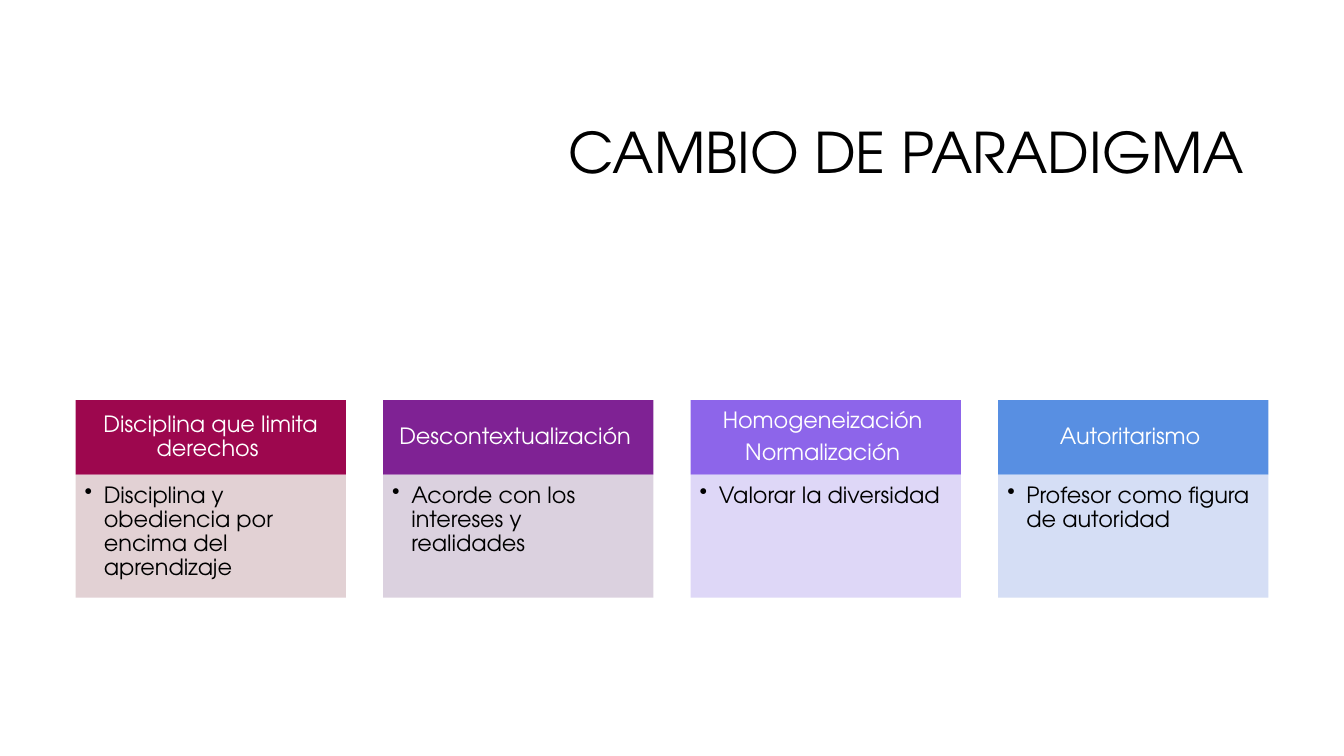
import pptx
import pptx.dml.color
import pptx.enum.shapes
import pptx.enum.text
import pptx.oxml
import pptx.oxml.ns
import pptx.util

Inches = pptx.util.Inches
Pt = pptx.util.Pt
ALIGN = pptx.enum.text.PP_ALIGN
ANCHOR = pptx.enum.text.MSO_ANCHOR
NS = pptx.oxml.ns.nsdecls("a")

COLORS = {
    "black": "000000", "white": "FFFFFF",
    "wine": "9D074E", "rose": "DFCCD0",
    "purple": "7F2294", "mauve": "D8CDDC",
    "violet": "8D65EA", "lilac": "DBD3F7",
    "blue": "588FE2", "sky": "D1DBF4",
}

CARDS = [
    (["Disciplina que limita derechos "],
     "Disciplina y obediencia por encima del aprendizaje", "wine", "rose"),
    (["Descontextualización "],
     "Acorde con los intereses y realidades", "purple", "mauve"),
    (["Homogeneización ", "Normalización "],
     "Valorar la diversidad", "violet", "lilac"),
    (["Autoritarismo "],
     "Profesor como figura de autoridad", "blue", "sky"),
]
LEFT, TOP, WIDTH, STEP = 0.75, 3.97, 2.68, 3.05
HEAD, BODY = 0.74, 1.22


def rgb(name):
    return pptx.dml.color.RGBColor.from_string(COLORS[name])


def write(frame, lines, size=16, color="black", align=ALIGN.LEFT,
          anchor=ANCHOR.TOP, inset=(0.1, 0.05, 0.1, 0.05), after=0,
          bullet=False, font="TeX Gyre Adventor"):
    """Fill a text frame, one paragraph per line."""
    frame.word_wrap = True
    frame.vertical_anchor = anchor
    (frame.margin_left, frame.margin_top,
     frame.margin_right, frame.margin_bottom) = map(Inches, inset)
    for i, line in enumerate(lines):
        para = frame.add_paragraph() if i else frame.paragraphs[0]
        para.alignment = align
        para.line_spacing = 0.9
        para.space_after = Pt(after)
        if bullet:
            props = para._p.get_or_add_pPr()
            props.set("marL", str(Inches(0.19)))
            props.set("indent", str(-Inches(0.19)))
            props.append(pptx.oxml.parse_xml(f'<a:buChar {NS} char="•"/>'))
        run = para.add_run()
        run.text = line
        run.font.name = font
        run.font.size = Pt(size)
        run.font.color.rgb = rgb(color)


class Deck:
    def __init__(self):
        self.show = pptx.Presentation()
        self.show.slide_width = Inches(13.33)
        self.show.slide_height = Inches(7.5)
        self.slide = self.show.slides.add_slide(self.show.slide_layouts[6])

    def title(self, text, *box):
        label = self.slide.shapes.add_textbox(*map(Inches, box))
        write(label.text_frame, [text], size=40, align=ALIGN.RIGHT,
              anchor=ANCHOR.MIDDLE)

    def block(self, fill, *box, alpha=None):
        shape = self.slide.shapes.add_shape(
            pptx.enum.shapes.MSO_SHAPE.RECTANGLE, *map(Inches, box))
        shape.shadow.inherit = False
        shape.fill.solid()
        shape.fill.fore_color.rgb = rgb(fill)
        shape.line.fill.background()
        if alpha:
            tint = shape._element.spPr.find(".//" + pptx.oxml.ns.qn("a:srgbClr"))
            tint.append(pptx.oxml.parse_xml(
                f'<a:alpha {NS} val="{alpha * 1000}"/>'))
        return shape.text_frame

    def card(self, left, heads, body, dark, light):
        """Draw a coloured heading with its pale bullet panel below."""
        frame = self.block(dark, left, TOP, WIDTH, HEAD)
        write(frame, heads, color="white", align=ALIGN.CENTER,
              anchor=ANCHOR.MIDDLE, inset=(0.12, 0.07, 0.12, 0.07), after=5.6)
        frame = self.block(light, left, TOP + HEAD, WIDTH, BODY, alpha=90)
        write(frame, [body], inset=(0.09, 0.09, 0.12, 0.14), after=2.4,
              bullet=True)


def main():
    deck = Deck()
    deck.title("CAMBIO DE PARADIGMA ", 3.17, 0.84, 9.42, 1.41)
    for i, card in enumerate(CARDS):
        deck.card(LEFT + i * STEP, *card)
    deck.show.save("out.pptx")


if __name__ == "__main__":
    main()
